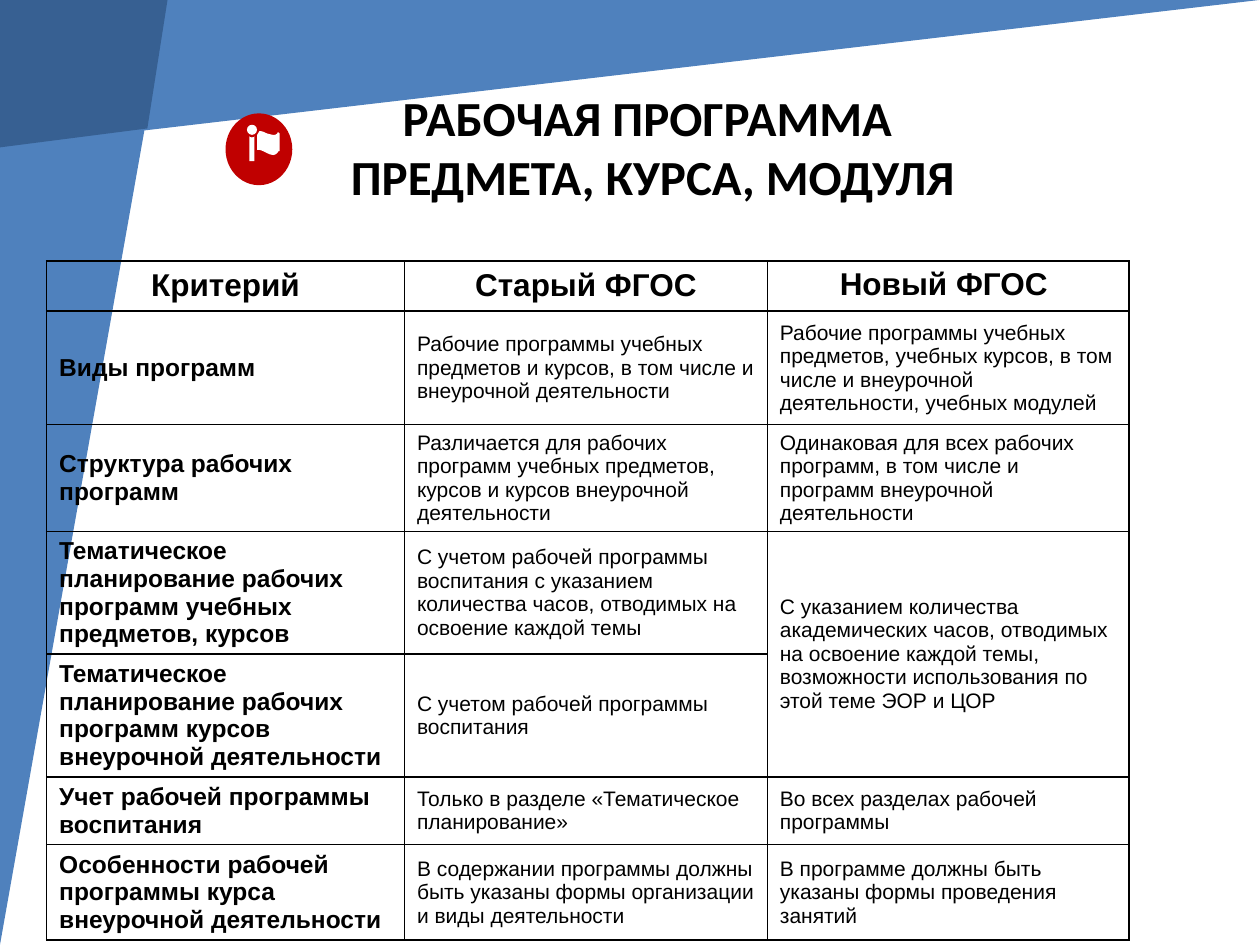
from lxml import etree
from pptx import Presentation
from pptx.dml.color import RGBColor
from pptx.enum import shapes as kinds, text as align
from pptx.oxml.ns import qn
from pptx.util import Inches, Pt

COLORS = {"blue": "4F81BD", "navy": "376092", "red": "C00000",
          "white": "FFFFFF", "black": "000000"}

TITLE = "РАБОЧАЯ ПРОГРАММА \vПРЕДМЕТА, КУРСА, МОДУЛЯ"
HEADER = ("Критерий", "Старый ФГОС", "Новый ФГОС ")
# criterion, old standard, new standard (None: merged with the cell above)
CRITERIA = [
    ("Виды программ",
     "Рабочие программы учебных предметов и курсов, в том числе и внеурочной деятельности",
     "Рабочие программы учебных предметов, учебных курсов, в том числе и внеурочной "
     "деятельности, учебных модулей"),
    ("Структура рабочих программ",
     "Различается для рабочих программ учебных предметов, курсов и курсов внеурочной деятельности",
     "Одинаковая для всех рабочих программ, в том числе и программ внеурочной деятельности"),
    ("Тематическое планирование рабочих программ учебных предметов, курсов",
     "С учетом рабочей программы воспитания с указанием количества часов, отводимых на "
     "освоение каждой темы",
     "С указанием количества академических часов, отводимых на освоение каждой темы, "
     "возможности использования по этой теме ЭОР и ЦОР"),
    ("Тематическое планирование рабочих программ курсов внеурочной деятельности",
     "С учетом рабочей программы воспитания",
     None),
    ("Учет рабочей программы воспитания",
     "Только в разделе «Тематическое планирование»",
     "Во всех разделах рабочей программы"),
    ("Особенности рабочей программы курса внеурочной деятельности",
     "В содержании программы должны быть указаны формы организации и виды деятельности",
     "В программе должны быть указаны формы проведения занятий"),
]
COLUMN_WIDTHS = (2.84, 2.88, 2.87)
ROW_HEIGHTS = (0.4, 0.9, 0.7, 0.9, 0.7, 0.5, 0.7)

# Outlines in inches: a pair is a corner, a triple of pairs is a cubic curve
CORNER = [(0, 0), (1.33, 0), (1.17, 1.02), (0, 1.17)]
POST = [(1.98, 1.08), (1.98, 1.28), (2.02, 1.28), (2.02, 1.08),
        ((2.02, 1.09), (2.01, 1.09), (2, 1.09)),
        ((1.99, 1.09), (1.98, 1.09), (1.98, 1.08))]
FLAG = [(2.06, 1.04), ((2.05, 1.05), (2.05, 1.06), (2.04, 1.07)), (2.04, 1.19),
        ((2.05, 1.19), (2.05, 1.19), (2.06, 1.19)),
        ((2.07, 1.19), (2.09, 1.2), (2.11, 1.21)),
        ((2.13, 1.22), (2.15, 1.23), (2.17, 1.23)),
        ((2.18, 1.23), (2.2, 1.22), (2.21, 1.2)),
        ((2.21, 1.2), (2.22, 1.2), (2.22, 1.2)), (2.22, 1.06),
        ((2.22, 1.06), (2.21, 1.05), (2.21, 1.05)),
        ((2.21, 1.05), (2.2, 1.05), (2.2, 1.06)),
        ((2.19, 1.07), (2.18, 1.07), (2.17, 1.07)),
        ((2.15, 1.07), (2.13, 1.06), (2.12, 1.06)),
        ((2.1, 1.05), (2.08, 1.04), (2.06, 1.04))]


def rgb(name):
    return RGBColor.from_string(COLORS[name])


def paint(shape, color):
    shape.shadow.inherit = False
    shape.fill.solid()
    shape.fill.fore_color.rgb = rgb(color)
    shape.line.fill.background()
    return shape


def add_preset(parent, kind, box, color):
    return paint(parent.add_shape(kind, *map(Inches, box)), color)


def add_outline(parent, outline, color, steps=6):
    points = []
    for part in outline:
        if isinstance(part[0], tuple):
            curve = (points[-1], *part)
            for step in range(1, steps + 1):
                t = step / steps
                weights = ((1 - t) ** 3, 3 * t * (1 - t) ** 2, 3 * t * t * (1 - t), t ** 3)
                points.append(tuple(sum(w * p[axis] for w, p in zip(weights, curve))
                                    for axis in (0, 1)))
        else:
            points.append(part)
    corners = [(Inches(x), Inches(y)) for x, y in points]
    builder = parent.build_freeform(*corners[0])
    builder.add_line_segments(corners[1:], close=True)
    return paint(builder.convert_to_shape(), color)


def style_text(frame, size, font, bold, centered):
    for paragraph in frame.paragraphs:
        paragraph.alignment = align.PP_ALIGN.CENTER if centered else align.PP_ALIGN.LEFT
        for run in paragraph.runs:
            run.font.size = Pt(size)
            run.font.name = font
            run.font.bold = bold
            run.font.color.rgb = rgb("black")


def add_borders(cell):
    properties = cell._tc.get_or_add_tcPr()
    for position, side in enumerate(("lnL", "lnR", "lnT", "lnB")):
        line = etree.Element(qn(f"a:{side}"), w=str(Pt(1)))
        fill = etree.SubElement(line, qn("a:solidFill"))
        etree.SubElement(fill, qn("a:srgbClr"), val=COLORS["black"])
        properties.insert(position, line)


prs = Presentation()
prs.slide_width, prs.slide_height = Inches(10), Inches(7.5)
slide = prs.slides.add_slide(prs.slide_layouts[5])
shapes = slide.shapes

# Corner decoration
for width, height in ((10, 1.17), (1.33, 7.5)):
    wedge = add_preset(shapes, kinds.MSO_SHAPE.RIGHT_TRIANGLE, (0, 0, width, height), "blue")
    wedge.element.spPr.get_or_add_xfrm().set("flipV", "1")
add_outline(shapes, CORNER, "navy")

# Title, in front of the decoration
title = shapes.title
title.left, title.top, title.width, title.height = map(Inches, (1.27, 0.57, 7.82, 1.19))
title.element.getparent().append(title.element)
frame = title.text_frame
frame.text = TITLE
frame.vertical_anchor = align.MSO_ANCHOR.MIDDLE
frame.margin_left = frame.margin_right = frame.margin_top = frame.margin_bottom = Inches(0.1)
style_text(frame, 28, "Calibri", True, True)

# Flag icon
add_preset(shapes, kinds.MSO_SHAPE.OVAL, (1.79, 0.9, 0.53, 0.57), "red")
icon = shapes.add_group_shape().shapes
add_preset(icon, kinds.MSO_SHAPE.OVAL, (1.96, 0.99, 0.08, 0.08), "white")
for outline in (POST, FLAG):
    add_outline(icon, outline, "white")

# Comparison table
rows = [HEADER, *CRITERIA]
table = shapes.add_table(len(rows), len(HEADER), Inches(0.37), Inches(2.07),
                         Inches(sum(COLUMN_WIDTHS)), Inches(sum(ROW_HEIGHTS))).table
table.horz_banding = False
for column, width in zip(table.columns, COLUMN_WIDTHS):
    column.width = Inches(width)
for r, (texts, height) in enumerate(zip(rows, ROW_HEIGHTS)):
    table.rows[r].height = Inches(height)
    for c, words in enumerate(texts):
        cell = table.cell(r, c)
        cell.fill.background()
        add_borders(cell)
        if words is None:
            table.cell(r - 1, c).merge(cell)
            continue
        cell.text = words
        is_header = r == 0
        is_top = is_header and c == 2
        cell.vertical_anchor = align.MSO_ANCHOR.TOP if is_top else align.MSO_ANCHOR.MIDDLE
        size = 18 if is_header else 14 if c == 0 else 12
        style_text(cell.text_frame, size, "Arial", is_header or c == 0, is_header)

prs.save("out.pptx")
